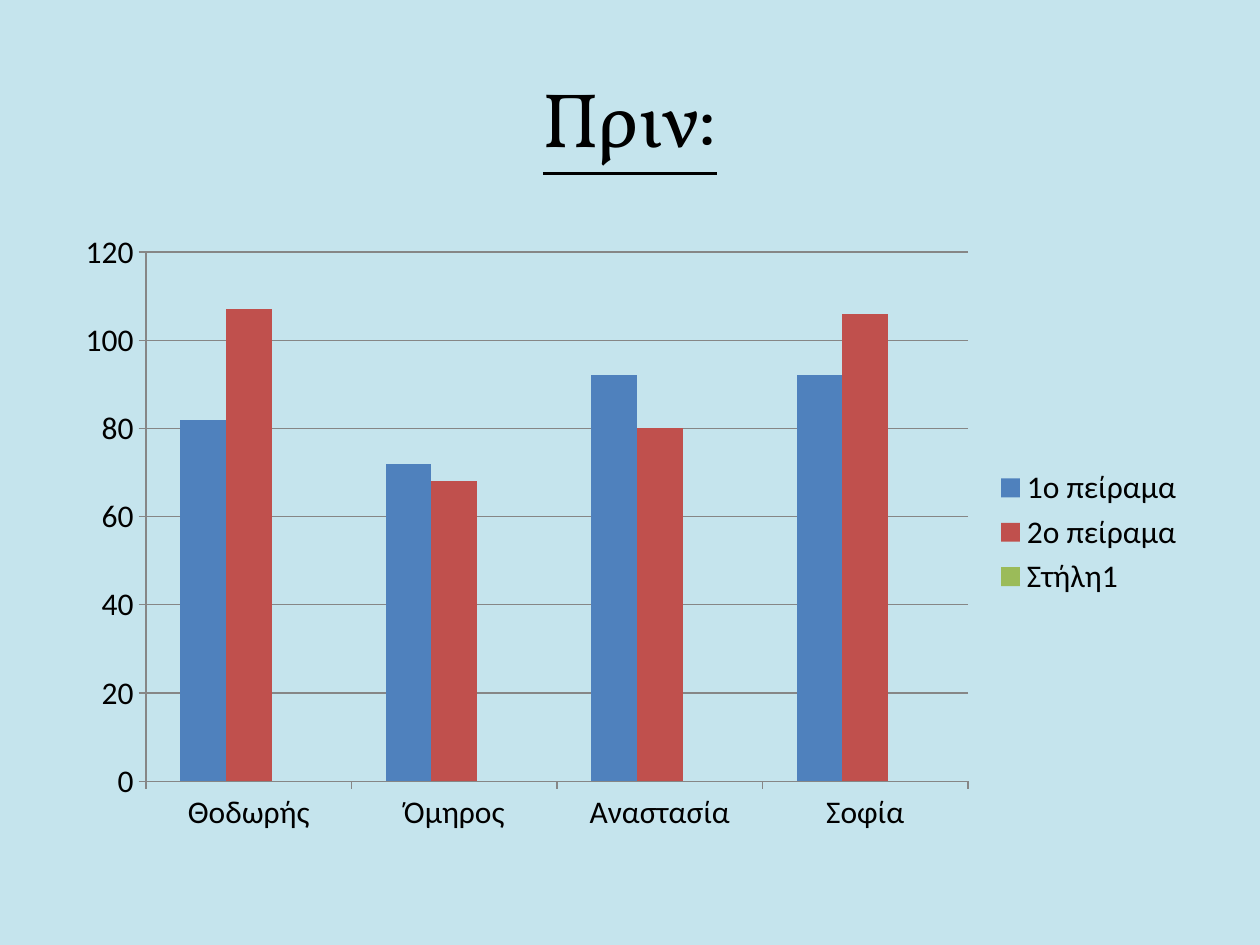
"""Build the slide with a clustered column chart of two experiments."""
from dataclasses import dataclass
from typing import Any, Optional

import pptx
import pptx.chart.data
import pptx.dml.color
import pptx.enum.chart
import pptx.enum.text
import pptx.util

WIDTH, HEIGHT = pptx.util.Inches(10), pptx.util.Inches(7.5)
COLORS = {
    "background": "C5E4ED",
    "text": "000000",
    "axis": "868686",
    "first": "4F81BD",
    "second": "C0504D",
    "empty": "9BBB59",
}
NAMES = ["Θοδωρής", "Όμηρος", "Αναστασία", "Σοφία"]


@dataclass(frozen=True)
class Area:
    left: float
    top: float
    width: float
    height: float

    def box(self) -> list[int]:
        return [
            int(WIDTH * self.left),
            int(HEIGHT * self.top),
            int(WIDTH * self.width),
            int(HEIGHT * self.height),
        ]


@dataclass(frozen=True)
class Experiment:
    name: str
    color: str
    results: list[Optional[int]]


HEADING_AREA = Area(0.05, 0.04, 0.9, 1 / 6)
RESULTS_AREA = Area(0.05, 0.7 / 3, 0.9, 0.66)
EXPERIMENTS = [
    Experiment("1ο πείραμα", "first", [82, 72, 92, 92]),
    Experiment("2ο πείραμα", "second", [107, 68, 80, 106]),
    Experiment("Στήλη1", "empty", [None] * len(NAMES)),
]


def rgb(key: str) -> pptx.dml.color.RGBColor:
    return pptx.dml.color.RGBColor.from_string(COLORS[key])


def apply(target: Any, values: dict[str, Any]) -> None:
    for attribute, value in values.items():
        setattr(target, attribute, value)


def paint(fill: Any, key: str) -> None:
    fill.solid()
    fill.fore_color.rgb = rgb(key)


def style_font(font: Any, name: str, size: int, underline: bool = False) -> None:
    apply(font, {"name": name, "size": pptx.util.Pt(size), "underline": underline})
    font.color.rgb = rgb("text")


def style_line(line: Any) -> None:
    line.width = pptx.util.Pt(0.75)
    line.color.rgb = rgb("axis")


def draw_heading(slide: Any, wording: str, area: Area) -> None:
    frame = slide.shapes.add_textbox(*area.box()).text_frame
    apply(frame, {"word_wrap": True, "vertical_anchor": pptx.enum.text.MSO_ANCHOR.MIDDLE})
    heading = frame.paragraphs[0]
    heading.alignment = pptx.enum.text.PP_ALIGN.CENTER
    run = heading.add_run()
    run.text = wording
    style_font(run.font, "Vollkorn", 44, underline=True)


def draw_results(slide: Any, experiments: list[Experiment], area: Area) -> None:
    data = pptx.chart.data.CategoryChartData()
    data.categories = NAMES
    for experiment in experiments:
        data.add_series(experiment.name, experiment.results)
    kind = pptx.enum.chart.XL_CHART_TYPE.COLUMN_CLUSTERED
    results = slide.shapes.add_chart(kind, *area.box(), data).chart
    apply(results, {"has_title": False, "has_legend": True})
    style_font(results.font, "Calibri", 18)
    apply(results.legend, {
        "position": pptx.enum.chart.XL_LEGEND_POSITION.RIGHT,
        "include_in_layout": False,
    })
    apply(results.plots[0], {"gap_width": 150, "overlap": 0, "vary_by_categories": False})
    for series, experiment in zip(results.plots[0].series, experiments):
        paint(series.format.fill, experiment.color)
        series.invert_if_negative = False
    for axis in (results.category_axis, results.value_axis):
        axis.major_tick_mark = pptx.enum.chart.XL_TICK_MARK.OUTSIDE
        style_line(axis.format.line)
    apply(results.value_axis, {
        "minimum_scale": 0,
        "maximum_scale": 120,
        "major_unit": 20,
        "has_major_gridlines": True,
    })
    style_line(results.value_axis.major_gridlines.format.line)


def main() -> None:
    deck = pptx.Presentation()
    apply(deck, {"slide_width": WIDTH, "slide_height": HEIGHT})
    slide = deck.slides.add_slide(deck.slide_layouts[6])
    paint(slide.background.fill, "background")
    draw_heading(slide, "Πριν:", HEADING_AREA)
    draw_results(slide, EXPERIMENTS, RESULTS_AREA)
    deck.save("out.pptx")


if __name__ == "__main__":
    main()
